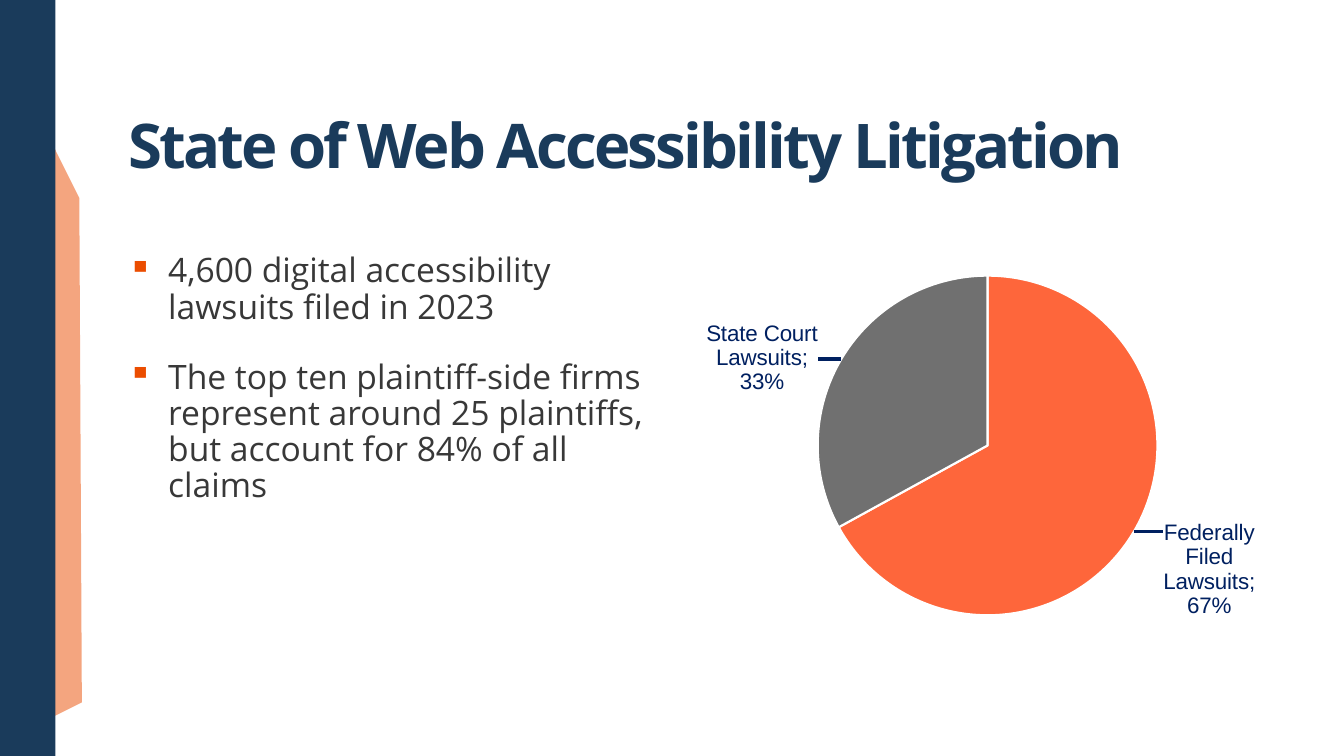
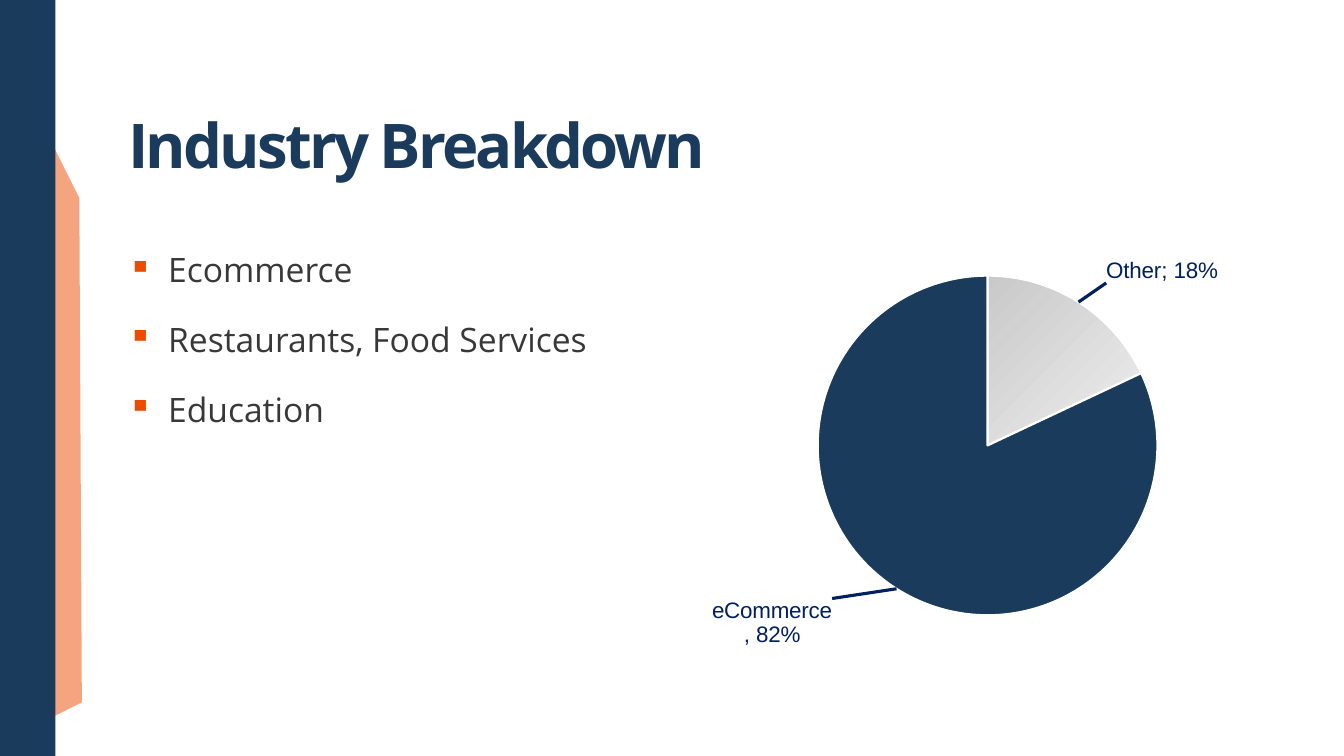
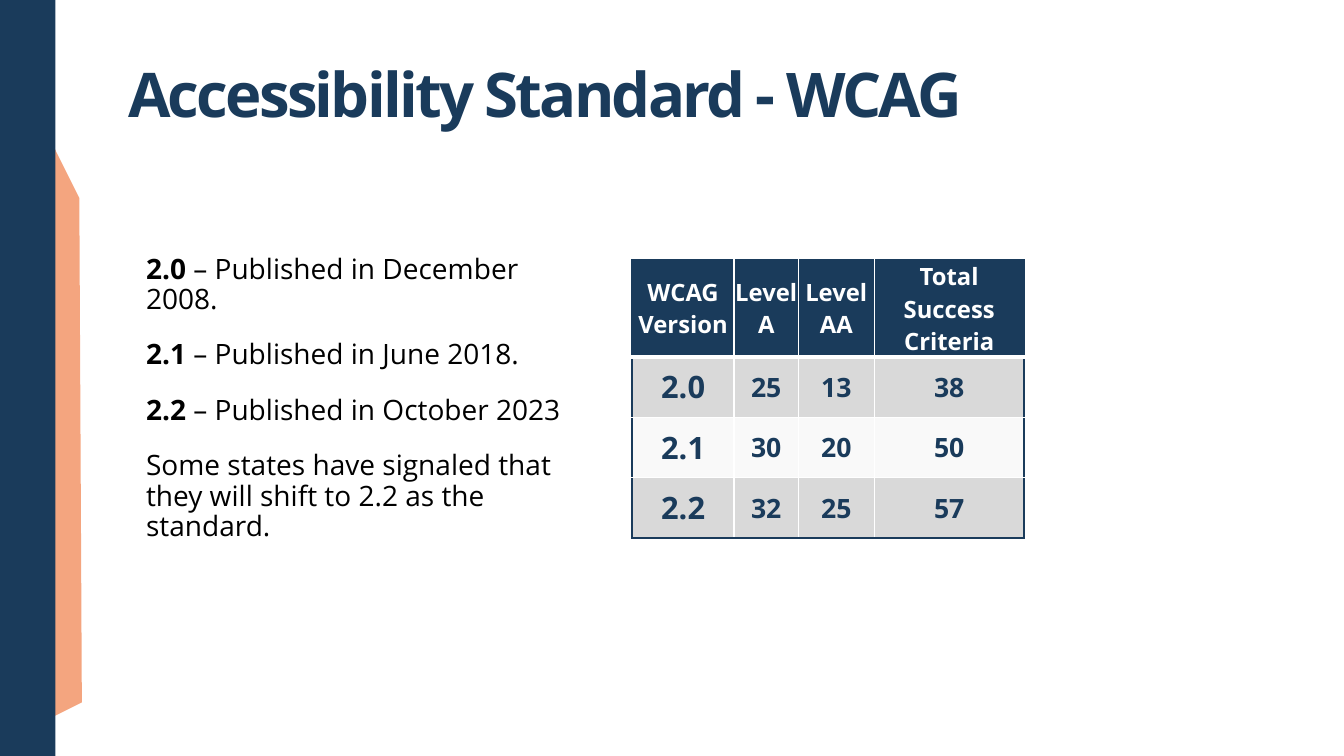
from pptx import Presentation
from pptx import util as u
from pptx.chart.data import CategoryChartData
from pptx.dml.color import RGBColor
from pptx.enum import chart as charts, shapes, text
from pptx.oxml import ns, parse_xml

Inches, Pt = u.Inches, u.Pt
FONT = "Open Sans"
CHART_FONT = "Arial"
COLORS = {
    "navy": "1A3B5B", "orange": "EB4D00", "body": "383838", "black": "000000",
    "white": "FFFFFF", "label": "002060", "coral": "FE663B", "gray": "707070",
    "silver": "C9C9C9", "pearl": "EEEEEE", "band": "D9D9D9", "pale": "F9F9F9",
}


def rgb(name):
    return RGBColor.from_string(COLORS[name])


def xml(tag, body):
    """Build one element, declaring the chart and drawing namespaces on it."""
    return parse_xml(body.replace(tag, f"{tag} {ns.nsdecls('a', 'c')}", 1))


def add_text(paragraph, content, *, size, color="black", bold=False, tracking=0,
             face=FONT):
    """Add one formatted run to a paragraph."""
    run = paragraph.add_run()
    run.text = content
    font = run.font
    font.name, font.size, font.bold = face, Pt(size), bold
    font.color.rgb = rgb(color)
    if tracking:
        run._r.get_or_add_rPr().set("spc", str(int(tracking * 100)))


def label_layout(x, y):
    return (f'<c:layout><c:manualLayout><c:x val="{x}"/><c:y val="{y}"/>'
            '</c:manualLayout></c:layout>')


PLOT_LAYOUT = (
    '<c:layout><c:manualLayout><c:layoutTarget val="inner"/>'
    '<c:xMode val="edge"/><c:yMode val="edge"/><c:x val="0.28"/><c:y val="0.14"/>'
    '<c:w val="0.56"/><c:h val="0.72"/></c:manualLayout></c:layout>')
LABEL_FILL = f'<a:solidFill><a:srgbClr val="{COLORS["label"]}"/></a:solidFill>'
LABEL_FORMAT = (
    '<c:numFmt formatCode="0%" sourceLinked="0"/>'
    '<c:spPr><a:noFill/><a:ln><a:noFill/></a:ln></c:spPr>'
    f'<c:txPr><a:bodyPr/><a:p><a:pPr><a:defRPr sz="1600" b="0">{LABEL_FILL}'
    f'<a:latin typeface="{CHART_FONT}"/></a:defRPr></a:pPr></a:p></c:txPr>'
    '<c:dLblPos val="bestFit"/><c:showLegendKey val="0"/><c:showVal val="1"/>'
    '<c:showCatName val="1"/><c:showSerName val="0"/><c:showPercent val="0"/>'
    '<c:showBubbleSize val="0"/><c:separator>; </c:separator>')
LEADER_LINES = (
    '<c:showLeaderLines val="1"/><c:leaderLines><c:spPr>'
    f'<a:ln w="28575">{LABEL_FILL}</a:ln></c:spPr></c:leaderLines>')


class Deck:
    """Shared style and the slide being built."""

    def __init__(self):
        self.presentation = Presentation()
        self.presentation.slide_width = Inches(13.33)
        self.presentation.slide_height = Inches(7.5)
        self.slide = None

    def shape(self, kind, box, color):
        shape = self.slide.shapes.add_shape(kind, *map(Inches, box))
        shape.shadow.inherit = False
        shape.fill.solid()
        shape.fill.fore_color.rgb = rgb(color)
        shape.line.fill.background()
        return shape

    def new_slide(self, title, title_height=1.45):
        layout = self.presentation.slide_layouts[5]
        self.slide = self.presentation.slides.add_slide(layout)
        # Side bands
        stripe = self.shape(shapes.MSO_SHAPE.DIAGONAL_STRIPE,
                            (-0.81, 1.61, 2.57, 5.22), "orange")
        stripe.rotation = 153.5
        stripe.adjustments[0] = 0.86
        stripe_color = stripe._element.spPr.find(".//" + ns.qn("a:srgbClr"))
        stripe_color.append(xml("a:alpha", '<a:alpha val="50000"/>'))
        self.shape(shapes.MSO_SHAPE.RECTANGLE, (0, 0, 0.55, 7.5), "navy")
        # Title
        placeholder = self.slide.shapes.title
        placeholder.left, placeholder.top = Inches(1.17), Inches(0.4)
        placeholder.width, placeholder.height = Inches(11), Inches(title_height)
        frame = placeholder.text_frame
        frame.auto_size = text.MSO_AUTO_SIZE.NONE
        frame.vertical_anchor = text.MSO_ANCHOR.BOTTOM
        paragraph = frame.paragraphs[0]
        paragraph.alignment = text.PP_ALIGN.LEFT
        paragraph.line_spacing = 0.9
        add_text(paragraph, title, size=44, color="navy", bold=True, tracking=-2)

    def paragraphs(self, box, count, gap):
        """Add a text box and yield its evenly spaced paragraphs."""
        frame = self.slide.shapes.add_textbox(*map(Inches, box)).text_frame
        frame.word_wrap = True
        for index in range(count):
            paragraph = frame.add_paragraph() if index else frame.paragraphs[0]
            paragraph.line_spacing = 0.9
            paragraph.space_before = Pt(gap if index else 0)
            paragraph.space_after = Pt(gap)
            yield paragraph

    def bullets(self, items):
        box = (1.17, 2.47, 5.5, 4.29)
        for paragraph, item in zip(self.paragraphs(box, len(items), 12), items):
            properties = paragraph._p.get_or_add_pPr()
            properties.set("marL", str(Inches(0.4)))
            properties.set("indent", str(-Inches(0.4)))
            properties.append(xml("a:buClr", '<a:buClr><a:srgbClr val="%s"/></a:buClr>'
                                  % COLORS["orange"]))
            properties.append(xml("a:buChar", '<a:buChar char="▪"/>'))
            add_text(paragraph, item, size=24, color="body")

    def version_list(self, items):
        box = (1.35, 2.48, 4.32, 3.21)
        for paragraph, (lead, rest) in zip(self.paragraphs(box, len(items), 9), items):
            if lead:
                add_text(paragraph, lead, size=20, bold=True)
            add_text(paragraph, rest, size=20)

    def pie(self, slices):
        """Slices are (category, value, colours, label offset, own label text)."""
        data = CategoryChartData(number_format="0%")
        data.categories = [part[0] for part in slices]
        data.add_series("Series 1", [part[1] for part in slices])
        box = map(Inches, (6.39, 2.08, 6.08, 4.68))
        chart = self.slide.shapes.add_chart(charts.XL_CHART_TYPE.PIE, *box, data).chart
        chart.has_legend = chart.has_title = False
        chart.font.name, chart.font.size = CHART_FONT, Pt(10)
        plot_area = chart._chartSpace.chart.plotArea
        for layout in plot_area.findall(ns.qn("c:layout")):
            plot_area.remove(layout)
        plot_area.insert(0, xml("c:layout", PLOT_LAYOUT))
        chart.plots[0].vary_by_categories = True
        series = chart.plots[0].series[0]
        # Labels
        labels = "".join(
            f'<c:dLbl><c:idx val="{index}"/>{label_layout(*part[3])}{LABEL_FORMAT}</c:dLbl>'
            for index, part in enumerate(slices))
        old_labels = series._element.get_or_add_dLbls()
        series._element.replace(old_labels, xml(
            "c:dLbls", f"<c:dLbls>{labels}{LABEL_FORMAT}{LEADER_LINES}</c:dLbls>"))
        # Slices
        for index, (_, _, colors, _, own_text) in enumerate(slices):
            point = series.points[index]
            fill = point.format.fill
            if len(colors) == 1:
                fill.solid()
                fill.fore_color.rgb = rgb(colors[0])
            else:
                fill.gradient()
                fill.gradient_angle = 315
                for stop, color in zip(fill.gradient_stops, colors):
                    stop.color.rgb = rgb(color)
            point.format.line.color.rgb = rgb("white")
            point.format.line.width = Pt(1.5)
            if own_text:
                paragraph = point.data_label.text_frame.paragraphs[0]
                add_text(paragraph, own_text, size=16, color="label", face=CHART_FONT)

    def borders(self, cell, sides):
        properties = cell._tc.get_or_add_tcPr()
        for side, (color, width) in zip("LRTB", sides):
            properties.append(xml(f"a:ln{side}", (
                f'<a:ln{side} w="{Pt(width)}"><a:solidFill><a:srgbClr val="{COLORS[color]}"/>'
                f'</a:solidFill></a:ln{side}>')))

    def table(self, rows, widths, heights):
        box = map(Inches, (6.27, 2.58, sum(widths), sum(heights)))
        table = self.slide.shapes.add_table(len(rows), len(widths), *box).table
        table.first_row = table.horz_banding = False
        for column, width in zip(table.columns, widths):
            column.width = Inches(width)
        for row, height in zip(table.rows, heights):
            row.height = Inches(height)
        edge, inner, rule = ("navy", 1.5), ("white", 1), ("white", 3)
        last_row, last_column = len(rows) - 1, len(widths) - 1
        for r, row in enumerate(rows):
            for c, content in enumerate(row):
                cell = table.cell(r, c)
                self.borders(cell, (
                    inner if c else edge,
                    edge if c == last_column else inner,
                    edge if r == 0 else rule if r == 1 else inner,
                    rule if r == 0 else edge if r == last_row else inner))
                cell.fill.solid()
                cell.fill.fore_color.rgb = rgb(
                    "navy" if r == 0 else "band" if r % 2 else "pale")
                cell.vertical_anchor = text.MSO_ANCHOR.MIDDLE
                cell.margin_left = cell.margin_right = 0
                cell.margin_top = cell.margin_bottom = 0
                frame = cell.text_frame
                for index, line in enumerate(content.split("\n")):
                    paragraph = frame.add_paragraph() if index else frame.paragraphs[0]
                    paragraph.alignment = text.PP_ALIGN.CENTER
                    add_text(paragraph, line, bold=True,
                             size=17 if r == 0 else 19 if c else 22,
                             color="navy" if r else "white")


def main():
    deck = Deck()

    # Litigation
    deck.new_slide("State of Web Accessibility Litigation")
    deck.bullets([
        "4,600 digital accessibility lawsuits filed in 2023",
        "The top ten plaintiff-side firms represent around 25 plaintiffs, "
        "but account for 84% of all claims"])
    deck.pie([
        ("Federally Filed Lawsuits", 0.67, ["coral"], (0.04, -0.03), None),
        ("State Court Lawsuits", 0.33, ["gray"], (-0.03, 0.08), None)])

    # Industries
    deck.new_slide("Industry Breakdown")
    deck.bullets(["Ecommerce", "Restaurants, Food Services", "Education"])
    deck.pie([
        ("Other", 0.18, ["silver", "pearl"], (0.04, -0.03), None),
        ("eCommerce", 0.82, ["navy"], (-0.1, 0.01), "eCommerce, 82%")])

    # Standard versions
    deck.new_slide("Accessibility Standard - WCAG", title_height=0.95)
    deck.version_list([
        ("2.0 ", "– Published in December 2008."),
        ("2.1 ", "– Published in June 2018."),
        ("2.2 ", "– Published in October 2023"),
        ("", "Some states have signaled that they will shift to 2.2 as the standard.")])
    deck.table(
        [["WCAG\nVersion", "Level\nA", "Level\nAA", "Total\nSuccess Criteria"],
         ["2.0", "25", "13", "38"],
         ["2.1", "30", "20", "50"],
         ["2.2", "32", "25", "57"]],
        widths=[1.01, 0.64, 0.75, 1.49], heights=[0.96, 0.6, 0.6, 0.6])

    deck.presentation.save("out.pptx")


if __name__ == "__main__":
    main()
